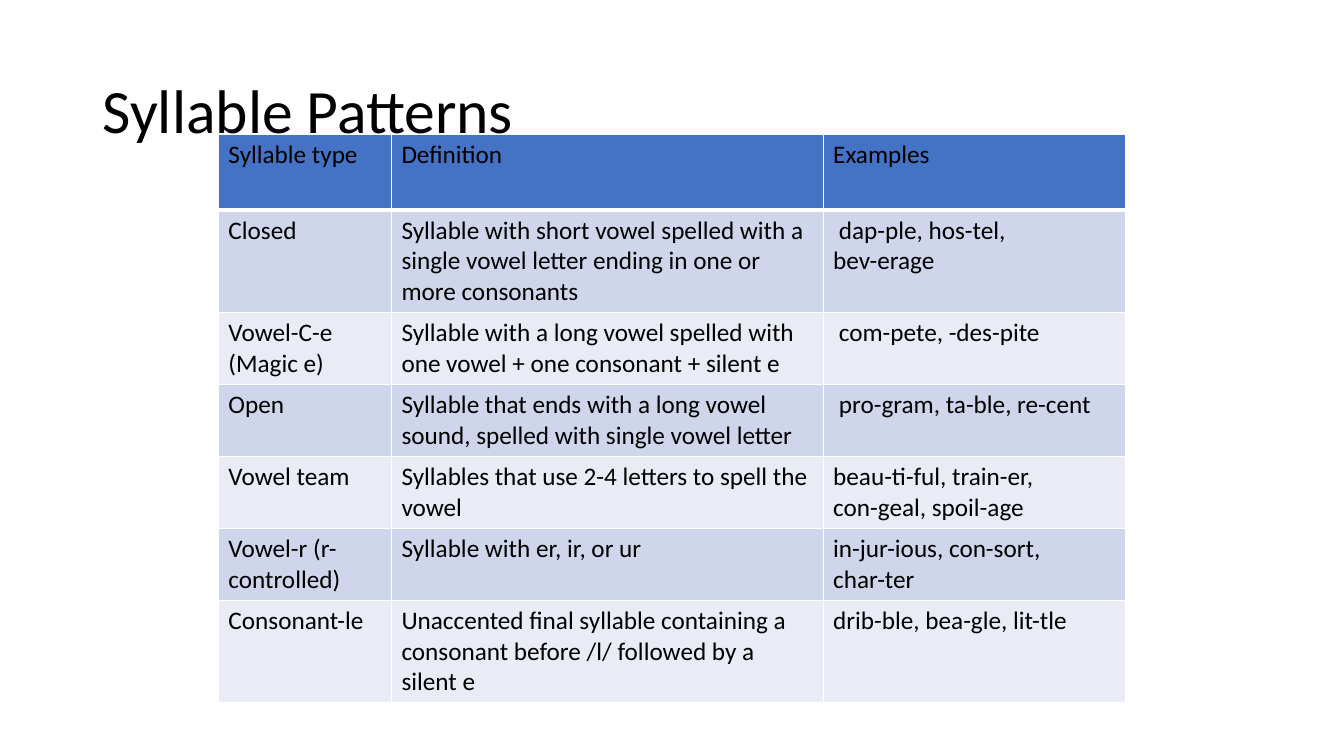
from dataclasses import dataclass

from lxml.etree import SubElement as Sub
from pptx import Presentation
from pptx.dml.color import RGBColor as RGB
from pptx.enum.text import MSO_ANCHOR as Anchor, MSO_AUTO_SIZE as AutoSize, PP_ALIGN as Align
from pptx.oxml.ns import qn
from pptx.util import Inches, Pt


@dataclass(frozen=True)
class Theme:
    font: str = "Calibri"
    ink: str = "000000"
    header: str = "4472C4"
    bands: tuple = ("CFD5EA", "E9EBF5")
    rule: str = "FFFFFF"
    thin: int = 1
    thick: int = 3
    title_size: int = 44
    body_size: int = 18


# Table content: type, definition, examples; "\v" breaks a line, "\n" a paragraph
HEADINGS = ("Syllable type", "Definition", "Examples")
PATTERNS = (
    ("Closed",
     "Syllable with short vowel spelled with a single vowel letter ending in one or more consonants",
     " dap-ple, hos-tel,\vbev-erage"),
    ("Vowel-C-e\n(Magic e)",
     "Syllable with a long vowel spelled with one vowel + one consonant + silent e",
     " com-pete, -des-pite"),
    ("Open",
     "Syllable that ends with a long vowel sound, spelled with single vowel letter",
     " pro-gram, ta-ble, re-cent"),
    ("Vowel team",
     "Syllables that use 2-4 letters to spell the vowel",
     "beau-ti-ful, train-er,\vcon-geal, spoil-age"),
    ("Vowel-r (r-controlled)",
     "Syllable with er, ir, or ur",
     "in-jur-ious, con-sort,\vchar-ter"),
    ("Consonant-le",
     "Unaccented final syllable containing a consonant before /l/ followed by a silent e",
     "drib-ble, bea-gle, lit-tle"),
)
COLUMN_WIDTHS = (20.6, 51.4, 36)
HEADER_ROW, TWO_LINES, THREE_LINES = 9, 8.56, 12.24
ROW_HEIGHTS = (HEADER_ROW, THREE_LINES, *[TWO_LINES] * 4, THREE_LINES)


class Deck:
    """Style and current slide, on a grid of 160 columns by 90 rows."""
    COLUMNS, ROWS = 160, 90

    def __init__(self, theme):
        self.theme = theme
        self.prs = Presentation()
        self.prs.slide_width, self.prs.slide_height = Inches(13.33), Inches(7.5)
        self.s = self.prs.slides.add_slide(self.prs.slide_layouts[5])

    def x(self, columns):
        return round(self.prs.slide_width * columns / self.COLUMNS)

    def y(self, rows):
        return round(self.prs.slide_height * rows / self.ROWS)

    def box(self, left, top, width, height):
        return self.x(left), self.y(top), self.x(width), self.y(height)

    def text(self, tf, text, size, **paragraph_format):
        tf.text = text
        for p in tf.paragraphs:
            for name, value in {"alignment": Align.LEFT, **paragraph_format}.items():
                setattr(p, name, value)
            for r in p.runs:
                font = {"name": self.theme.font, "size": Pt(size), "bold": False}
                for name, value in font.items():
                    setattr(r.font, name, value)
                r.font.color.rgb = RGB.from_string(self.theme.ink)

    def title(self, text, *place):
        sp = self.s.shapes.title
        sp.left, sp.top, sp.width, sp.height = self.box(*place)
        tf = sp.text_frame
        frame = {"word_wrap": True, "auto_size": AutoSize.NONE, "vertical_anchor": Anchor.MIDDLE}
        for name, value in frame.items():
            setattr(tf, name, value)
        self.text(tf, text, self.theme.title_size, line_spacing=0.9)

    def borders(self, cell, **widths):
        tcPr = cell._tc.get_or_add_tcPr()
        for side in "LRTB":
            ln = Sub(tcPr, qn(f"a:ln{side}"), w=str(Pt(widths.get(side, self.theme.thin))))
            Sub(Sub(ln, qn("a:solidFill")), qn("a:srgbClr"), val=self.theme.rule)

    def cell(self, cell, text, row):
        t = self.theme
        heavy = {0: {"B": t.thick}, 1: {"T": t.thick}}
        self.borders(cell, **heavy.get(row, {}))
        cell.fill.solid()
        color = t.bands[(row - 1) % len(t.bands)] if row else t.header
        cell.fill.fore_color.rgb = RGB.from_string(color)
        self.text(cell.text_frame, text, t.body_size)

    def table(self, rows, left, top, widths, heights):
        place = self.box(left, top, sum(widths), sum(heights))
        table = self.s.shapes.add_table(len(rows), len(widths), *place).table
        for column, width in zip(table.columns, widths):
            column.width = self.x(width)
        for i, (row, height, texts) in enumerate(zip(table.rows, heights, rows)):
            row.height = self.y(height)
            for cell, text in zip(row.cells, texts):
                self.cell(cell, text, i)


def main():
    deck = Deck(Theme())
    # Title
    deck.title("Syllable Patterns", 11, 4.8, 138, 17.4)
    # Table of syllable types
    deck.table((HEADINGS, *PATTERNS), 26, 16, COLUMN_WIDTHS, ROW_HEIGHTS)
    deck.prs.save("out.pptx")


if __name__ == "__main__":
    main()
